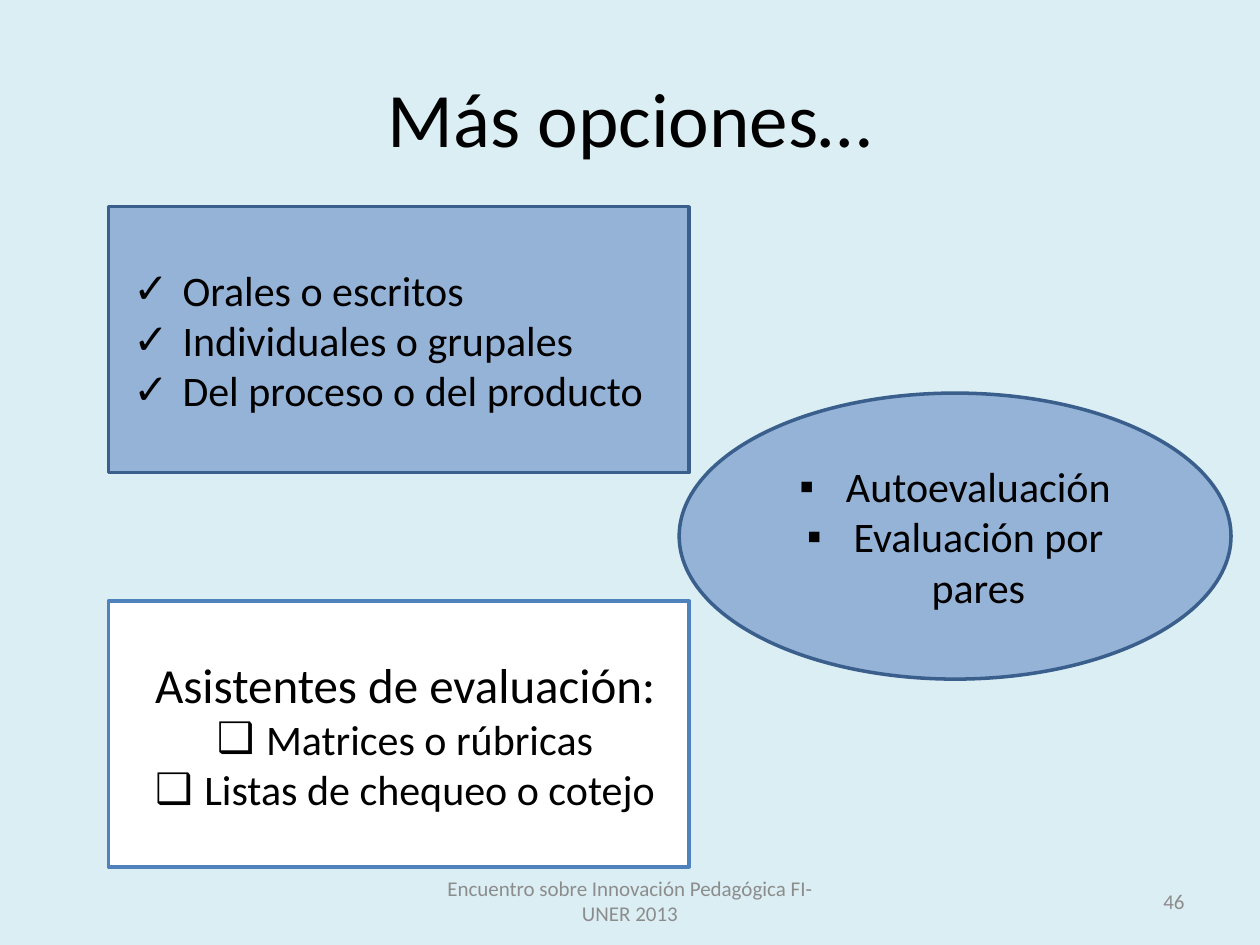
import pptx
import pptx.util
import pptx.dml.color
import pptx.enum.shapes
import pptx.enum.text
import lxml.etree

RGB = pptx.dml.color.RGBColor
SHAPE = pptx.enum.shapes.MSO_SHAPE
ALIGN = pptx.enum.text.PP_ALIGN
Inches = pptx.util.Inches

BACKGROUND = RGB(0xDB, 0xEE, 0xF4)
BLUE = RGB(0x95, 0xB3, 0xD7)
DARK_BLUE = RGB(0x3A, 0x5F, 0x8C)
MID_BLUE = RGB(0x4F, 0x81, 0xBD)
WHITE = RGB(0xFF, 0xFF, 0xFF)
BLACK = RGB(0, 0, 0)
GREY = RGB(0x8C, 0x8C, 0x8C)

WIDTH, HEIGHT = 10, 7.5
MARGIN = WIDTH * 0.05
BOX_LEFT, BOX_WIDTH, BOX_HEIGHT = 0.86, 4.61, 2.11
BOX_TOP, BOX_STEP = 1.64, 3.13
FOOTER_TOP, FOOTER_HEIGHT = 6.95, 0.4
FOOTER_WIDTH, NUMBER_WIDTH = 3.17, 2.33

TITLE = "Más opciones…"
FORMATS = ["Orales o escritos", "Individuales o grupales", "Del proceso o del producto"]
EVALUATORS = ["Autoevaluación", "Evaluación por pares"]
ASSISTANTS_HEADING = "Asistentes de evaluación:"
ASSISTANTS = ["Matrices o rúbricas", "Listas de chequeo o cotejo"]
FOOTER = "Encuentro sobre Innovación Pedagógica FI-UNER 2013"
NUMBER = "46"


def write(frame, text, size=24, color=BLACK, align=ALIGN.CENTER,
          bullet=None, left=0, hanging=0):
    frame.word_wrap = True
    frame.vertical_anchor = pptx.enum.text.MSO_ANCHOR.MIDDLE
    paragraph = frame.add_paragraph() if frame.text else frame.paragraphs[0]
    paragraph.alignment = align
    run = paragraph.add_run()
    run.text = text
    run.font.name = "Calibri"
    run.font.size = pptx.util.Pt(size)
    run.font.color.rgb = color
    properties = paragraph._p.get_or_add_pPr()
    properties.set("marL", str(Inches(left)))
    properties.set("indent", str(-Inches(hanging)))
    if bullet:
        namespace = properties.nsmap["a"]
        font = lxml.etree.SubElement(properties, f"{{{namespace}}}buFont")
        font.set("typeface", "Arial")
        mark = lxml.etree.SubElement(properties, f"{{{namespace}}}buChar")
        mark.set("char", bullet)


def add_panel(slide, kind, place, fill, line):
    panel = slide.shapes.add_shape(kind, *map(Inches, place))
    panel.shadow.inherit = False
    panel.fill.solid()
    panel.fill.fore_color.rgb = fill
    panel.line.color.rgb = line
    panel.line.width = pptx.util.Pt(2)
    return panel.text_frame


def add_label(slide, place, text, **style):
    write(slide.shapes.add_textbox(*map(Inches, place)).text_frame, text, **style)


def main():
    deck = pptx.Presentation()
    deck.slide_width, deck.slide_height = Inches(WIDTH), Inches(HEIGHT)
    slide = deck.slides.add_slide(deck.slide_layouts[6])
    slide.background.fill.solid()
    slide.background.fill.fore_color.rgb = BACKGROUND

    add_label(slide, (MARGIN, 0.3, WIDTH - 2 * MARGIN, 1.25), TITLE, size=44)

    evaluators = add_panel(slide, SHAPE.OVAL, (5.39, 3.12, 4.38, 2.27), BLUE, DARK_BLUE)
    for item in EVALUATORS:
        write(evaluators, item, bullet="▪", left=0.37, hanging=0.37)

    hang = {"left": 0.49, "hanging": 0.39}
    formats = add_panel(slide, SHAPE.RECTANGLE,
                        (BOX_LEFT, BOX_TOP, BOX_WIDTH, BOX_HEIGHT), BLUE, DARK_BLUE)
    for item in FORMATS:
        write(formats, item, align=ALIGN.LEFT, bullet="✓", **hang)

    assistants = add_panel(slide, SHAPE.RECTANGLE,
                           (BOX_LEFT, BOX_TOP + BOX_STEP, BOX_WIDTH, BOX_HEIGHT),
                           WHITE, MID_BLUE)
    write(assistants, ASSISTANTS_HEADING, size=28, **hang)
    for item in ASSISTANTS:
        write(assistants, item, bullet="❑", **hang)

    add_label(slide, (WIDTH - MARGIN - NUMBER_WIDTH, FOOTER_TOP, NUMBER_WIDTH, FOOTER_HEIGHT),
              NUMBER, size=12, color=GREY, align=ALIGN.RIGHT)
    add_label(slide, ((WIDTH - FOOTER_WIDTH) / 2, FOOTER_TOP, FOOTER_WIDTH, FOOTER_HEIGHT),
              FOOTER, size=12, color=GREY)
    deck.save("out.pptx")


if __name__ == "__main__":
    main()
